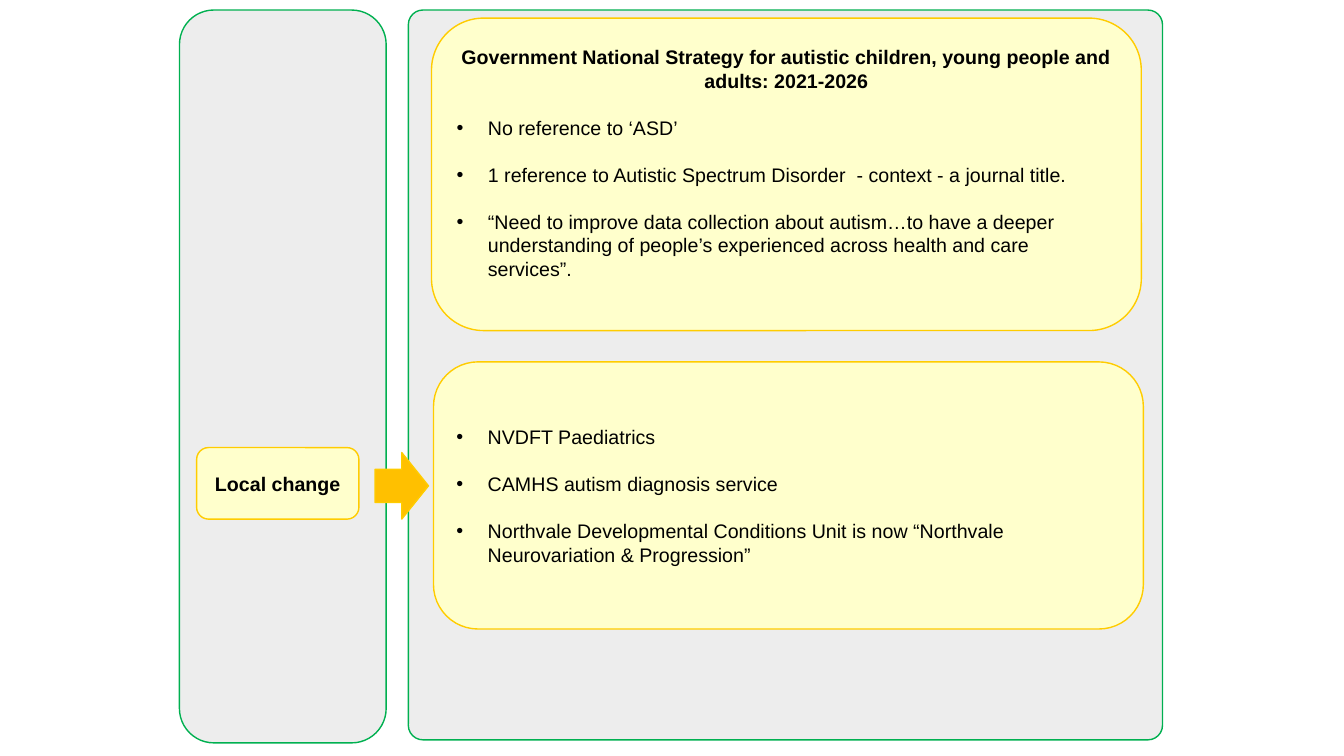
from dataclasses import dataclass

from lxml import etree
from pptx import Presentation
from pptx.dml.color import RGBColor
from pptx.enum.shapes import MSO_SHAPE as Shape
from pptx.enum.text import MSO_ANCHOR as Anchor, PP_ALIGN as Align
from pptx.oxml.ns import qn
from pptx.util import Inches, Pt

COLOURS = {
    "panel": "EDEDED",
    "panel_edge": "00B050",
    "box": "FFFFCC",
    "box_edge": "FFCC00",
    "arrow": "FFC000",
    "text": "000000",
}
FONT = "Arial"
TEXT_SIZE = 14
LINE_PITCH = 16.8
BULLET_INDENT = Inches(0.31)


@dataclass
class Block:
    left: float
    top: float
    width: float
    height: float
    fill: str = "box"
    edge: str = "box_edge"
    kind: Shape = Shape.ROUNDED_RECTANGLE
    corner: float | None = None
    heading: str = ""
    bullets: tuple[str, ...] = ()
    bottom_inset: float = 0.05


def colour(key: str) -> RGBColor:
    return RGBColor.from_string(COLOURS[key])


def add_text(frame, text: str, *, bold: bool = False, bullet: bool = False,
             align: Align = Align.LEFT, space_before: float = 0) -> None:
    """Write one paragraph, using the frame's first one while it is empty."""
    paragraph = frame.paragraphs[0] if not frame.text else frame.add_paragraph()
    paragraph.alignment = align
    paragraph.line_spacing = Pt(LINE_PITCH)
    paragraph.space_before = Pt(space_before)
    run = paragraph.add_run()
    run.text = text
    run.font.name = FONT
    run.font.size = Pt(TEXT_SIZE)
    run.font.bold = bold
    run.font.color.rgb = colour("text")
    if bullet:
        properties = paragraph._p.get_or_add_pPr()
        properties.set("marL", str(BULLET_INDENT))
        properties.set("indent", str(-BULLET_INDENT))
        etree.SubElement(properties, qn("a:buFont")).set("typeface", FONT)
        etree.SubElement(properties, qn("a:buChar")).set("char", "•")


def draw_block(slide, block: Block) -> None:
    shape = slide.shapes.add_shape(
        block.kind, Inches(block.left), Inches(block.top),
        Inches(block.width), Inches(block.height))
    shape.shadow.inherit = False
    shape.fill.solid()
    shape.fill.fore_color.rgb = colour(block.fill)
    shape.line.color.rgb = colour(block.edge)
    shape.line.width = Pt(1)
    if block.corner is not None:
        shape.adjustments[0] = block.corner

    frame = shape.text_frame
    frame.word_wrap = True
    frame.vertical_anchor = Anchor.MIDDLE
    frame.margin_bottom = Inches(block.bottom_inset)
    if block.heading:
        add_text(frame, block.heading, bold=True, align=Align.CENTER)
    for bullet in block.bullets:
        gap = LINE_PITCH if frame.text else 0
        add_text(frame, bullet, bullet=True, space_before=gap)


BLOCKS = [
    # Background panels
    Block(4.05, 0.1, 7.48, 7.24, "panel", "panel_edge", corner=0.02),
    Block(1.78, 0.1, 2.05, 7.27, "panel", "panel_edge"),
    # National strategy
    Block(4.28, 0.18, 7.04, 3.1, bottom_inset=0.28,
          heading="Government National Strategy for autistic children, "
                  "young people and adults: 2021-2026",
          bullets=(
              "No reference to ‘ASD’",
              "1 reference to Autistic Spectrum Disorder  - context - a journal title.",
              "“Need to improve data collection about autism…to have a deeper "
              "understanding of people’s experienced across health and care services”.",
          )),
    # Local change, pointing to its examples
    Block(3.72, 4.49, 0.53, 0.66, "arrow", kind=Shape.RIGHT_ARROW),
    Block(4.3, 3.59, 7.04, 2.65,
          bullets=(
              "NVDFT Paediatrics",
              "CAMHS autism diagnosis service",
              "Northvale Developmental Conditions Unit is now "
              "“Northvale Neurovariation & Progression”",
          )),
    Block(1.95, 4.44, 1.61, 0.71, heading="Local change"),
]


def main() -> None:
    presentation = Presentation()
    presentation.slide_width = Inches(13.33)
    presentation.slide_height = Inches(7.5)
    slide = presentation.slides.add_slide(presentation.slide_layouts[6])
    for block in BLOCKS:
        draw_block(slide, block)
    presentation.save("out.pptx")


if __name__ == "__main__":
    main()
